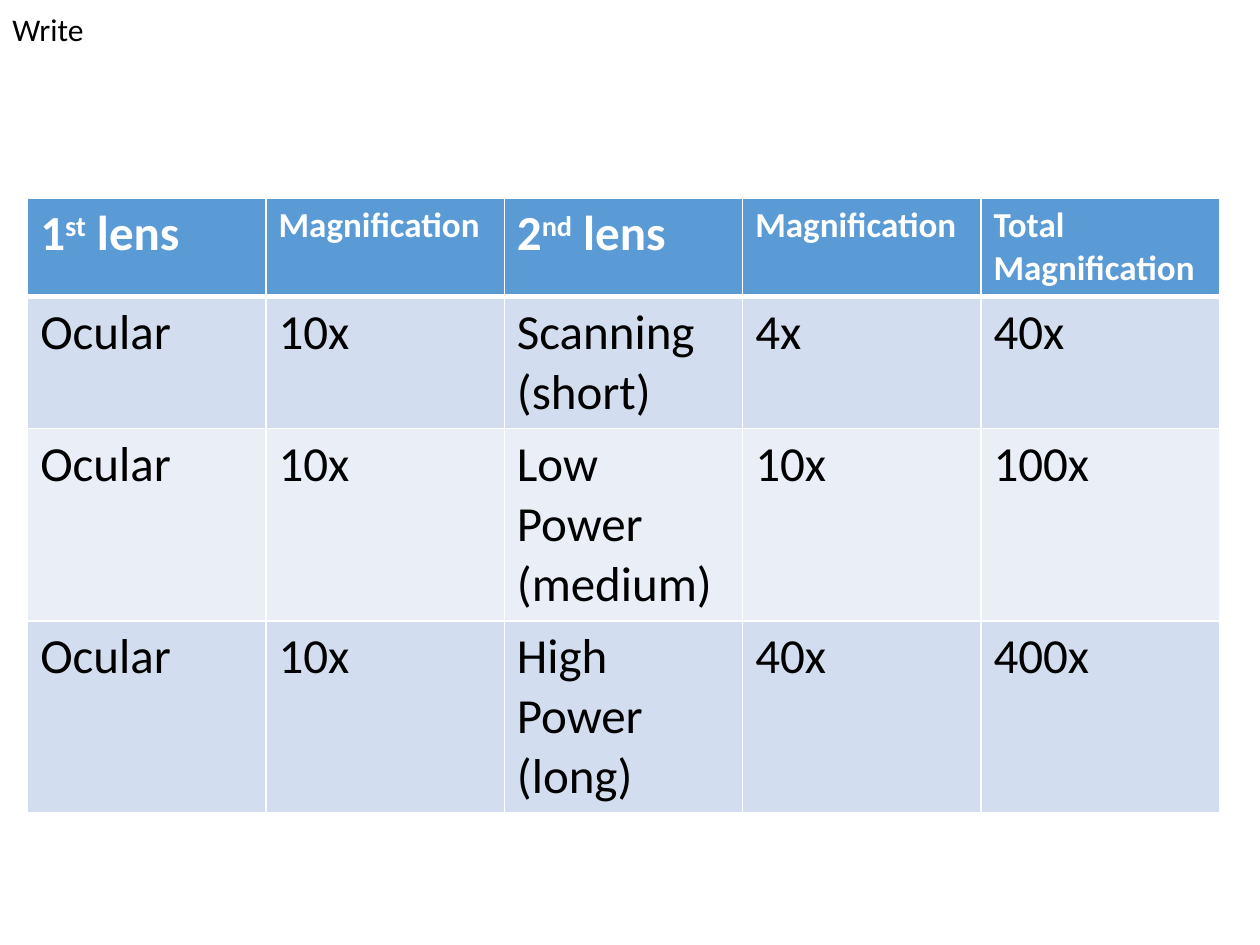
from dataclasses import dataclass

from lxml import etree
from pptx import Presentation
from pptx.dml.color import RGBColor
from pptx.oxml.ns import qn
from pptx.util import Pt

COLORS = {"head": "5B9BD5", "odd": "D2DEEF", "even": "EAEFF7",
          "white": "FFFFFF", "black": "000000"}
FONT = "Calibri"
LEFT, TOP, WIDTH, HEIGHT = 15.84, 113.04, 681, 345.6
ROW_HEIGHTS = [39.6, 33.84, 33.12, 87.84]


@dataclass
class Run:
    text: str
    size: float = 28
    color: str = "black"
    bold: bool = False
    raised: bool = False


def head(text: str, size: float = 28, raised: bool = False) -> Run:
    return Run(text, size, "white", True, raised)


def ordinal(number: str, suffix: str) -> list[list[Run]]:
    return [[head(number), head(suffix, raised=True), head(" lens")]]


# A cell is a list of paragraphs, and a paragraph is a list of runs.
MAGNIFY = [[head("Magnification", 20)]]
HEADER = [ordinal("1", "st"), MAGNIFY, ordinal("2", "nd"), MAGNIFY,
          [[head("Total", 20)], *MAGNIFY]]
LENSES = [
    ("Ocular", "10x", "Scanning\n(short)", "4x", "40x"),
    ("Ocular", "10x", "Low Power\n(medium)", "10x", "100x"),
    ("Ocular", "10x", "High Power\n(long)", "40x", "400x"),
]


def add_run(para, run: Run) -> None:
    """Add a run, with a line break at each newline."""
    for i, line in enumerate(run.text.split("\n")):
        if i:
            para.add_line_break()
        part = para.add_run()
        part.text = line
        font = part.font
        font.name, font.size, font.bold = FONT, Pt(run.size), run.bold
        font.color.rgb = RGBColor.from_string(COLORS[run.color])
        if run.raised:
            part._r.get_or_add_rPr().set("baseline", "30000")


def write(frame, paras: list[list[Run]]) -> None:
    for i, runs in enumerate(paras):
        para = frame.add_paragraph() if i else frame.paragraphs[0]
        for run in runs:
            add_run(para, run)


def add_border(cell, side: str, width: float) -> None:
    line = etree.SubElement(cell._tc.get_or_add_tcPr(), qn(f"a:ln{side}"),
                            w=str(Pt(width)))
    fill = etree.SubElement(line, qn("a:solidFill"))
    etree.SubElement(fill, qn("a:srgbClr"), val=COLORS["white"])


def fill_row(table, index: int, cells: list, color: str) -> None:
    thick = {(0, "B"): 3, (1, "T"): 3}
    for col, paras in enumerate(cells):
        cell = table.cell(index, col)
        for side in "LRTB":
            add_border(cell, side, thick.get((index, side), 1))
        cell.fill.solid()
        cell.fill.fore_color.rgb = RGBColor.from_string(COLORS[color])
        write(cell.text_frame, paras)


def add_lenses(slide) -> None:
    frame = slide.shapes.add_table(len(LENSES) + 1, len(HEADER), Pt(LEFT),
                                   Pt(TOP), Pt(WIDTH), Pt(HEIGHT))
    table = frame.table
    for row, height in zip(table.rows, ROW_HEIGHTS):
        row.height = Pt(height)
    frame.height = Pt(HEIGHT)
    fill_row(table, 0, HEADER, "head")
    for i, lens in enumerate(LENSES, start=1):
        cells = [[[Run(text)]] for text in lens]
        fill_row(table, i, cells, "odd" if i % 2 else "even")


def add_label(slide) -> None:
    box = slide.shapes.add_textbox(Pt(0), Pt(2.16), Pt(133.92), Pt(28.8))
    box.text_frame.word_wrap = True
    write(box.text_frame, [[Run("Write", 18)]])


def main() -> None:
    deck = Presentation()
    deck.slide_width, deck.slide_height = Pt(720), Pt(540)
    slide = deck.slides.add_slide(deck.slide_layouts[6])
    add_lenses(slide)
    add_label(slide)
    deck.save("out.pptx")


if __name__ == "__main__":
    main()
